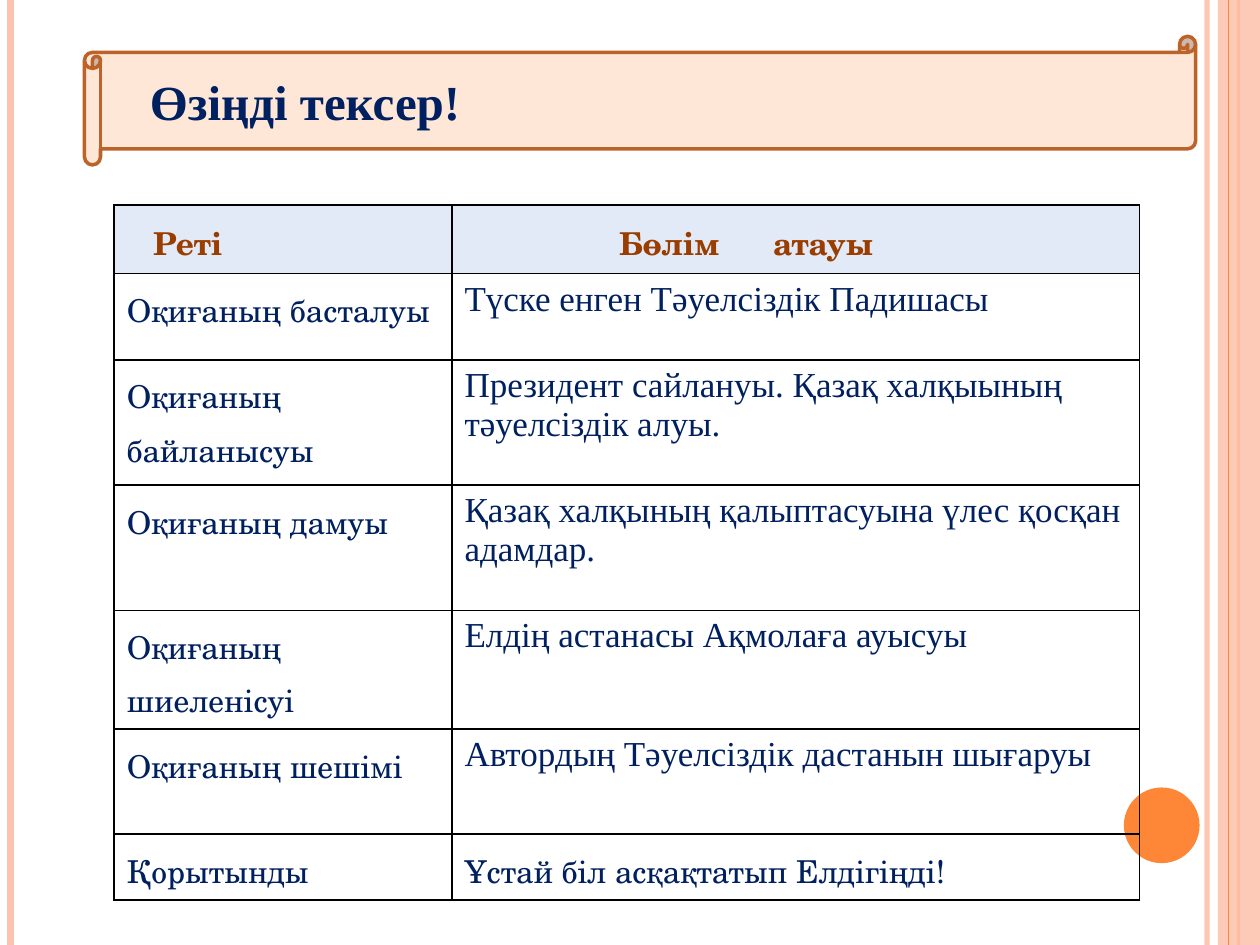
from dataclasses import dataclass

import pptx
import pptx.dml.color
import pptx.enum.shapes
import pptx.enum.text
import pptx.oxml
import pptx.oxml.ns
import pptx.util
from lxml import etree

Pt = pptx.util.Pt
qn = pptx.oxml.ns.qn
Shape = pptx.enum.shapes.MSO_SHAPE

SERIF = "Times New Roman"
SCHOLA = "TeX Gyre Schola"
NAVY = "002060"
RUST = "9A3D01"
PEACH = "FEC3AE"
ORANGE = "FE8637"
SLIDE_WIDTH, SLIDE_HEIGHT = 720, 540


@dataclass
class Stripe:
    x: float
    weight: float
    colour: str
    opacity: int = 100


@dataclass
class TextStyle:
    font: str
    size: float
    colour: str = NAVY
    bold: bool = False
    line_spacing: float = 1.0


@dataclass
class Section:
    height: float
    order: str
    title: str
    title_style: TextStyle


LABEL = TextStyle(SCHOLA, 18, line_spacing=1.15)
HEADING = TextStyle(SCHOLA, 18, RUST, True, 1.15)
ANSWER = TextStyle(SERIF, 20)
BANNER = TextStyle(SERIF, 28, bold=True)

STRIPES = [
    Stripe(689.75, 3, PEACH, 93),
    Stripe(6, 4.5, PEACH),
    Stripe(707.75, 1.5, ORANGE),
]
INNER_STRIPE = Stripe(702, 0.75, ORANGE)

HEADER_HEIGHT = 35
SECTIONS = [
    Section(49.5, "Оқиғаның басталуы", "Түске енген Тәуелсіздік Падишасы", ANSWER),
    Section(71.5, "Оқиғаның байланысуы",
            "Президент сайлануы. Қазақ халқыының тәуелсіздік алуы.", ANSWER),
    Section(71.5, "Оқиғаның дамуы",
            "Қазақ халқының қалыптасуына үлес қосқан адамдар.", ANSWER),
    Section(60, "Оқиғаның шиеленісуі", "Елдің астанасы Ақмолаға ауысуы", ANSWER),
    Section(60, "Оқиғаның шешімі", "Автордың Тәуелсіздік дастанын шығаруы", ANSWER),
    Section(33.75, "Қорытынды", "Ұстай біл асқақтатып Елдігіңді!", LABEL),
]


def rgb(value: str) -> pptx.dml.color.RGBColor:
    return pptx.dml.color.RGBColor.from_string(value)


def set_opacity(properties, percent: int) -> None:
    for colour in properties.iter(qn("a:srgbClr")):
        etree.SubElement(colour, qn("a:alpha"), val=str(percent * 1000))


def draw_stripe(slide, stripe: Stripe) -> None:
    line = slide.shapes.add_connector(
        pptx.enum.shapes.MSO_CONNECTOR.STRAIGHT,
        Pt(stripe.x), Pt(0), Pt(stripe.x), Pt(SLIDE_HEIGHT))
    line.line.color.rgb = rgb(stripe.colour)
    line.line.width = Pt(stripe.weight)
    properties = line._element.spPr
    if stripe.opacity < 100:
        set_opacity(properties, stripe.opacity)
    etree.SubElement(properties, qn("a:effectLst"))


def draw_shape(slide, kind, left: float, top: float, width: float, height: float,
               fill: str):
    shape = slide.shapes.add_shape(kind, Pt(left), Pt(top), Pt(width), Pt(height))
    shape.shadow.inherit = False
    shape.fill.solid()
    shape.fill.fore_color.rgb = rgb(fill)
    shape.line.fill.background()
    return shape


def write(frame, text: str, style: TextStyle) -> None:
    frame.word_wrap = True
    frame.text = text
    paragraph = frame.paragraphs[0]
    paragraph.alignment = pptx.enum.text.PP_ALIGN.LEFT
    paragraph.line_spacing = style.line_spacing
    for run in paragraph.runs:
        run.font.name = style.font
        run.font.size = Pt(style.size)
        run.font.bold = style.bold
        run.font.color.rgb = rgb(style.colour)


def add_tab_stop(paragraph, position: float) -> None:
    tabs = etree.SubElement(paragraph._p.get_or_add_pPr(), qn("a:tabLst"))
    etree.SubElement(tabs, qn("a:tab"), pos=str(Pt(position)), algn="l")


def border_cell(cell) -> None:
    properties = cell._tc.get_or_add_tcPr()
    for index, side in enumerate(("lnL", "lnR", "lnT", "lnB")):
        border = etree.Element(qn(f"a:{side}"), w=str(Pt(1)))
        fill = etree.SubElement(border, qn("a:solidFill"))
        etree.SubElement(fill, qn("a:srgbClr"), val="000000")
        properties.insert(index, border)


def draw_banner(slide) -> None:
    banner = draw_shape(slide, Shape.HORIZONTAL_SCROLL, 48.25, 20.75, 635, 73.5, "FFE7D7")
    banner.line.color.rgb = rgb("BC6329")
    banner.line.width = Pt(2)
    frame = banner.text_frame
    write(frame, "Өзіңді тексер!", BANNER)
    frame.vertical_anchor = pptx.enum.text.MSO_ANCHOR.MIDDLE
    frame.margin_left = Pt(28.25)
    frame.paragraphs[0].space_before = Pt(6)


def draw_table(slide) -> None:
    heights = [HEADER_HEIGHT] + [section.height for section in SECTIONS]
    widths = (193, 393)
    table = slide.shapes.add_table(
        len(heights), len(widths), Pt(65.25), Pt(117),
        Pt(sum(widths)), Pt(sum(heights))).table
    table.first_row = table.horz_banding = False
    for column, width in zip(table.columns, widths):
        column.width = Pt(width)
    for row, height in zip(table.rows, heights):
        row.height = Pt(height)
    for cell in table.iter_cells():
        cell.fill.background()
        border_cell(cell)

    headings = (("Реті", 22.25), ("Бөлім\tатауы", 95.5))
    for cell, (text, indent) in zip(table.rows[0].cells, headings):
        write(cell.text_frame, text, HEADING)
        cell.margin_left = Pt(indent)
        cell.fill.solid()
        cell.fill.fore_color.rgb = rgb("E3EAF7")
    add_tab_stop(table.cell(0, 1).text_frame.paragraphs[0], 88)

    for number, section in enumerate(SECTIONS, start=1):
        write(table.cell(number, 0).text_frame, section.order, LABEL)
        write(table.cell(number, 1).text_frame, section.title, section.title_style)


def main() -> None:
    deck = pptx.Presentation()
    deck.slide_width, deck.slide_height = Pt(SLIDE_WIDTH), Pt(SLIDE_HEIGHT)
    slide = deck.slides.add_slide(deck.slide_layouts[6])
    for stripe in STRIPES:
        draw_stripe(slide, stripe)
    side_band = draw_shape(slide, Shape.RECTANGLE, 696, 0, 24, SLIDE_HEIGHT, PEACH)
    set_opacity(side_band._element.spPr, 87)
    draw_stripe(slide, INNER_STRIPE)
    draw_shape(slide, Shape.OVAL, 642.25, 450, 43.25, 43.25, ORANGE)
    draw_banner(slide)
    draw_table(slide)
    deck.save("out.pptx")


if __name__ == "__main__":
    main()
